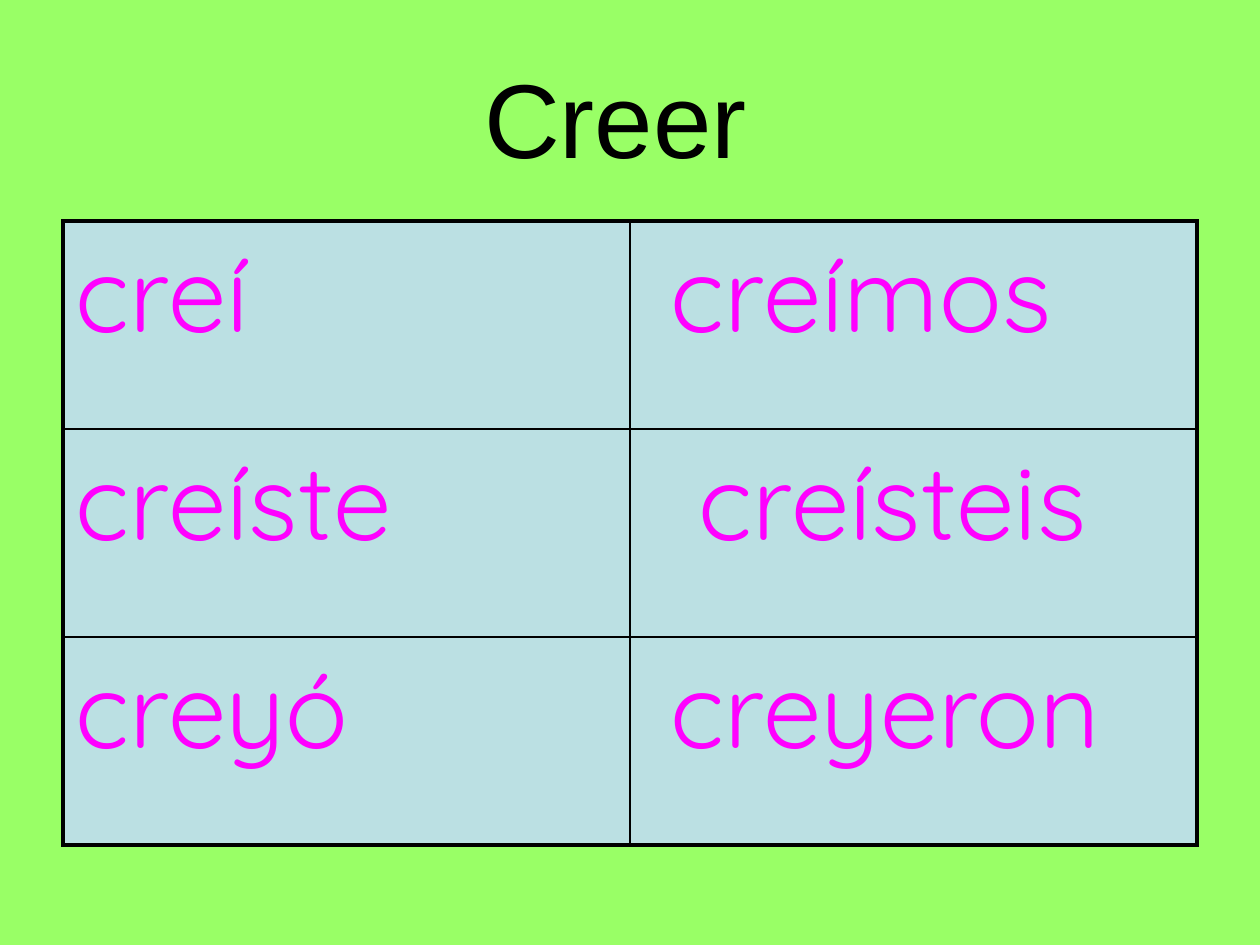
"""Build a slide with the preterite conjugation of the verb creer."""
import pptx
import pptx.dml.color
import pptx.enum.text
import pptx.oxml
import pptx.oxml.ns
import pptx.util

BLACK = pptx.dml.color.RGBColor(0x00, 0x00, 0x00)
GREEN = pptx.dml.color.RGBColor(0x99, 0xFF, 0x66)
PALE_BLUE = pptx.dml.color.RGBColor(0xBB, 0xE0, 0xE3)
MAGENTA = pptx.dml.color.RGBColor(0xFF, 0x00, 0xFF)

ROW_HEIGHT, COLUMN_WIDTH = 208, 567
CELL_INSET, SPACE_WIDTH = 13, 28
OUTER, INNER = 2.25, 1


def px(length):
    return pptx.util.Emu(round(length * 914400 / 126))


def write(frame, text, font, color, align, size=60, before=0):
    paragraph = frame.paragraphs[0]
    paragraph.alignment = align
    paragraph.space_before = pptx.util.Pt(before)
    run = paragraph.add_run()
    run.text = text
    run.font.name = font
    run.font.size = pptx.util.Pt(size)
    run.font.color.rgb = color


deck = pptx.Presentation()
deck.slide_width, deck.slide_height = px(1260), px(945)
slide = deck.slides.add_slide(deck.slide_layouts[5])
slide.background.fill.solid()
slide.background.fill.fore_color.rgb = GREEN

verb = slide.shapes.title
verb.left, verb.top, verb.width, verb.height = px(63), px(38), px(1134), px(158)
verb.text_frame.auto_size = pptx.enum.text.MSO_AUTO_SIZE.NONE
verb.text_frame.vertical_anchor = pptx.enum.text.MSO_ANCHOR.MIDDLE
write(verb.text_frame, "Creer ", "Arial", BLACK, pptx.enum.text.PP_ALIGN.CENTER)

forms = [
    [("creí", 0), ("creímos", 1)],
    [("creíste", 0), ("creísteis", 2)],
    [("creyó", 0), ("creyeron", 1)],
]
rows, columns = len(forms), len(forms[0])
conjugation = slide.shapes.add_table(
    rows, columns, px(63), px(221), px(columns * COLUMN_WIDTH), px(rows * ROW_HEIGHT)
).table
conjugation.first_row = conjugation.horz_banding = False

for row, persons in enumerate(forms):
    for column, (form, spaces) in enumerate(persons):
        cell = conjugation.cell(row, column)
        cell.margin_left = px(CELL_INSET + spaces * SPACE_WIDTH)
        cell.fill.solid()
        cell.fill.fore_color.rgb = PALE_BLUE
        write(cell.text_frame, form, "Quicksand", MAGENTA,
              pptx.enum.text.PP_ALIGN.LEFT, before=12)
        on_edge = {
            "lnL": column == 0,
            "lnR": column == columns - 1,
            "lnT": row == 0,
            "lnB": row == rows - 1,
        }
        properties = cell._tc.get_or_add_tcPr()
        for position, (side, outer) in enumerate(on_edge.items()):
            width = pptx.util.Pt(OUTER if outer else INNER)
            properties.insert(position, pptx.oxml.parse_xml(
                f'<a:{side} {pptx.oxml.ns.nsdecls("a")} w="{width}"><a:solidFill>'
                f'<a:srgbClr val="{BLACK}"/></a:solidFill></a:{side}>'
            ))

deck.save("out.pptx")
